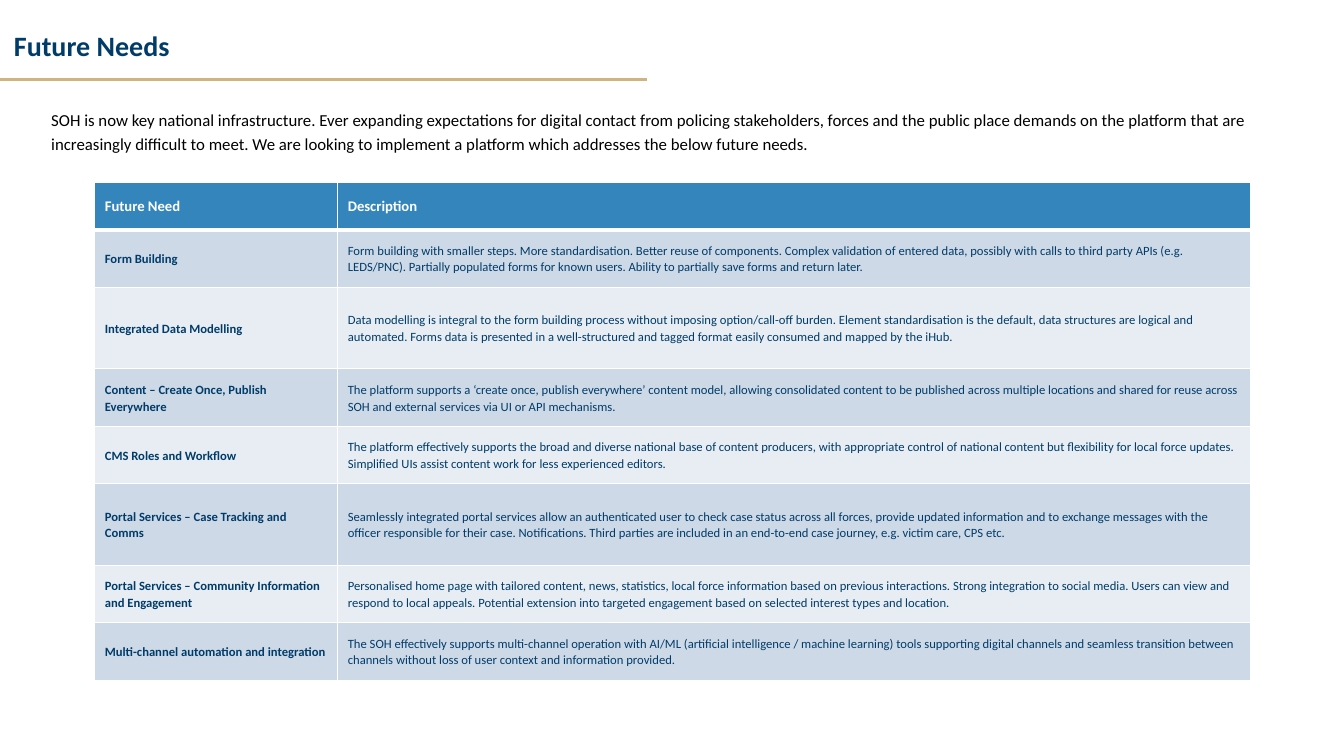
from lxml.etree import SubElement
from pptx import Presentation
from pptx.dml.color import RGBColor
from pptx.enum.shapes import MSO_CONNECTOR as Connector
from pptx.enum.text import MSO_ANCHOR as Anchor
from pptx.oxml.ns import qn
from pptx.util import Inches, Pt

COLORS = {
    "navy": "003C69",
    "gold": "CFB481",
    "header": "3385BC",
    "band_dark": "CED9E7",
    "band_light": "E8EDF3",
    "white": "FFFFFF",
    "black": "000000",
}

INTRO = (
    "SOH is now key national infrastructure. Ever expanding expectations for digital contact "
    "from policing stakeholders, forces and the public place demands on the platform that are "
    "increasingly difficult to meet. We are looking to implement a platform which addresses "
    "the below future needs."
)

NEEDS = [
    ("Future Need", "Description", 0.47),
    ("Form Building",
     "Form building with smaller steps. More standardisation. Better reuse of components. "
     "Complex validation of entered data, possibly with calls to third party APIs (e.g. "
     "LEDS/PNC). Partially populated forms for known users. Ability to partially save forms "
     "and return later.", 0.57),
    ("Integrated Data Modelling",
     "Data modelling is integral to the form building process without imposing "
     "option/call-off burden. Element standardisation is the default, data structures are "
     "logical and automated. Forms data is presented in a well-structured and tagged format "
     "easily consumed and mapped by the iHub.", 0.81),
    ("Content – Create Once, Publish Everywhere",
     "The platform supports a ‘create once, publish everywhere’ content model, allowing "
     "consolidated content to be published across multiple locations and shared for reuse "
     "across SOH and external services via UI or API mechanisms.", 0.57),
    ("CMS Roles and Workflow",
     "The platform effectively supports the broad and diverse national base of content "
     "producers, with appropriate control of national content but flexibility for local "
     "force updates. Simplified UIs assist content work for less experienced editors.", 0.57),
    ("Portal Services – Case Tracking and Comms",
     "Seamlessly integrated portal services allow an authenticated user to check case status "
     "across all forces, provide updated information and to exchange messages with the "
     "officer responsible for their case. Notifications. Third parties are included in an "
     "end-to-end case journey, e.g. victim care, CPS etc.", 0.81),
    ("Portal Services – Community Information and Engagement",
     "Personalised home page with tailored content, news, statistics, local force "
     "information based on previous interactions. Strong integration to social media. Users "
     "can view and respond to local appeals. Potential extension into targeted engagement "
     "based on selected interest types and location.", 0.57),
    ("Multi-channel automation and integration",
     "The SOH effectively supports multi-channel operation with AI/ML (artificial "
     "intelligence / machine learning) tools supporting digital channels and seamless "
     "transition between channels without loss of user context and information provided.",
     0.57),
]


def color(name):
    return RGBColor.from_string(COLORS[name])


def write_text(frame, text, size, ink="navy", bold=False, spacing=1.1, after=0, font="Calibri"):
    paragraph = frame.paragraphs[0]
    paragraph.line_spacing = spacing
    paragraph.space_after = Pt(after)
    run = paragraph.add_run()
    run.text = text
    run.font.name = font
    run.font.size = Pt(size)
    run.font.bold = bold
    run.font.color.rgb = color(ink)


class SlideBuilder:
    def __init__(self, slide):
        self.slide = slide

    def line(self, left, top, right, bottom, ink, width):
        connector = self.slide.shapes.add_connector(
            Connector.STRAIGHT, Inches(left), Inches(top), Inches(right), Inches(bottom))
        connector.line.color.rgb = color(ink)
        connector.line.width = Pt(width)
        SubElement(connector._element.spPr, qn("a:effectLst"))

    def text(self, left, top, width, height, text, anchor=Anchor.TOP, **style):
        box = self.slide.shapes.add_textbox(
            Inches(left), Inches(top), Inches(width), Inches(height))
        box.text_frame.word_wrap = True
        box.text_frame.vertical_anchor = anchor
        write_text(box.text_frame, text, **style)

    def border(self, cell, side, width):
        properties = cell._tc.get_or_add_tcPr()
        edge = SubElement(properties, qn(f"a:ln{side}"), w=str(Pt(width)))
        fill = SubElement(edge, qn("a:solidFill"))
        SubElement(fill, qn("a:srgbClr"), val=COLORS["white"])

    def cell(self, cell, text, fill, top, bottom, **style):
        cell.vertical_anchor = Anchor.MIDDLE
        cell.margin_left = cell.margin_right = Inches(0.1)
        cell.margin_top = cell.margin_bottom = Inches(0.04)
        write_text(cell.text_frame, text, **style)
        for side, width in (("L", 1), ("R", 1), ("T", top), ("B", bottom)):
            self.border(cell, side, width)
        cell.fill.solid()
        cell.fill.fore_color.rgb = color(fill)

    def table(self, left, top, widths, rows):
        height = sum(row[-1] for row in rows)
        table = self.slide.shapes.add_table(
            len(rows), len(widths), Inches(left), Inches(top),
            Inches(sum(widths)), Inches(height)).table
        for column, width in zip(table.columns, widths):
            column.width = Inches(width)
        for row_index, (*texts, row_height) in enumerate(rows):
            table.rows[row_index].height = Inches(row_height)
            header = row_index == 0
            band = "band_dark" if row_index % 2 else "band_light"
            for column_index, text in enumerate(texts):
                self.cell(
                    table.cell(row_index, column_index), text,
                    fill="header" if header else band,
                    top=3 if row_index == 1 else 1,
                    bottom=3 if header else 1,
                    size=10.5 if header else 9,
                    ink="white" if header else "navy",
                    bold=header or column_index == 0,
                    after=column_index)


def main():
    presentation = Presentation()
    presentation.slide_width = Inches(13.33)
    presentation.slide_height = Inches(7.5)
    builder = SlideBuilder(presentation.slides.add_slide(presentation.slide_layouts[6]))
    builder.line(0, 0.79, 6.42, 0.79, "gold", 2.25)
    builder.text(0.04, 0.05, 6.47, 0.85, "Future Needs", Anchor.MIDDLE,
                 size=20, bold=True, spacing=0.9)
    builder.table(0.94, 1.81, (2.41, 9.05), NEEDS)
    builder.text(0.41, 1, 12.52, 0.45, INTRO, size=12, ink="black", spacing=1.2)
    presentation.save("out.pptx")


if __name__ == "__main__":
    main()
